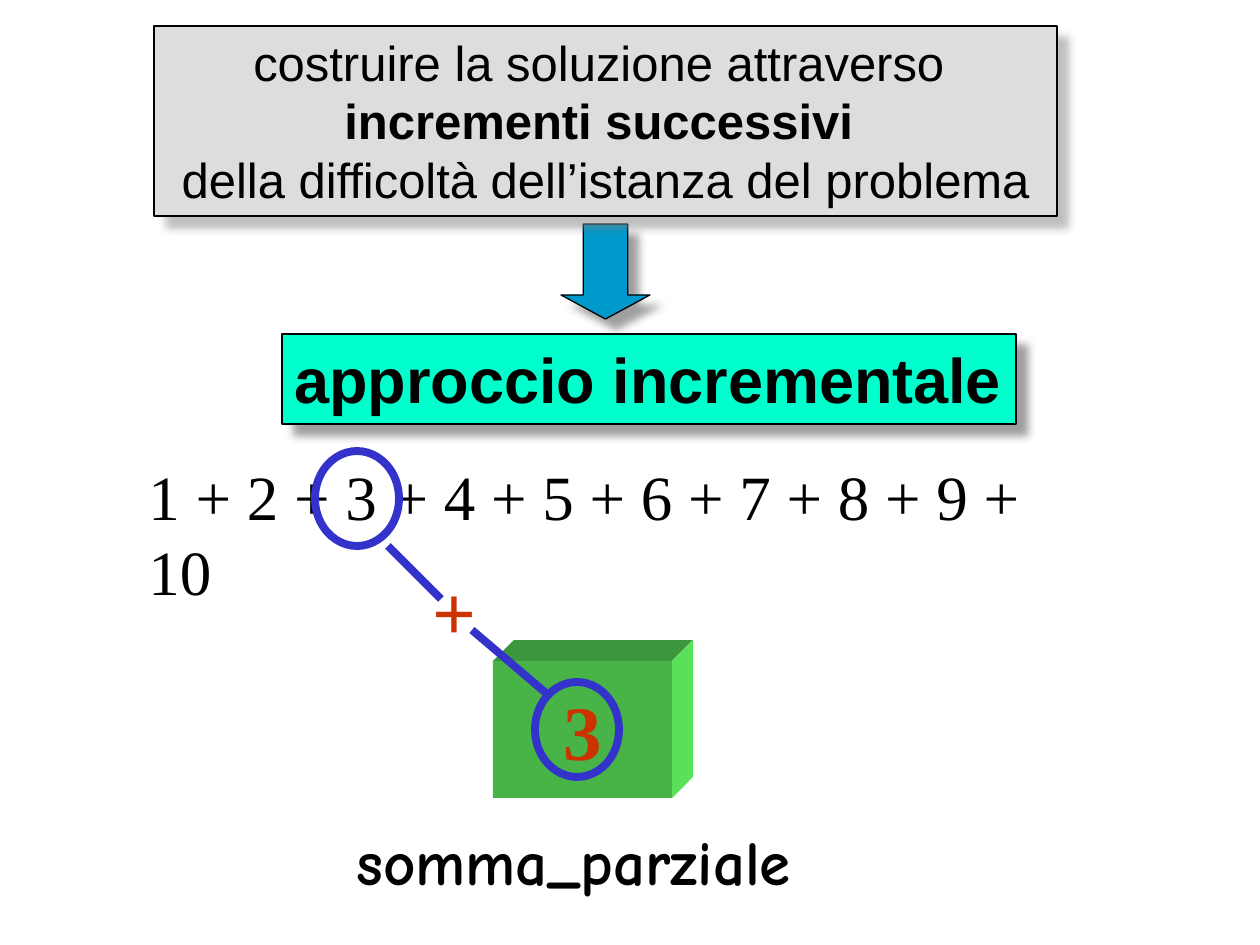
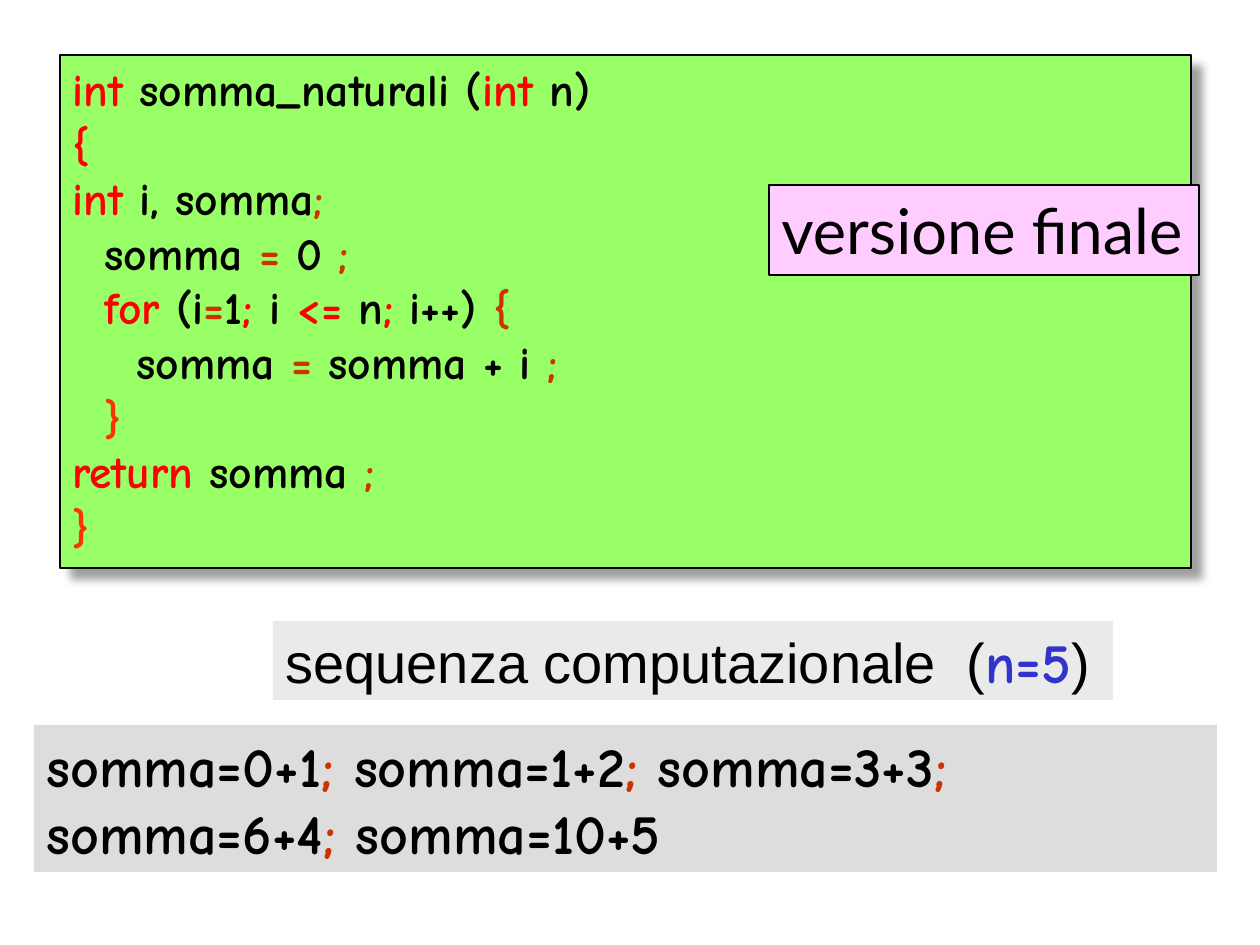
from lxml import etree
from pptx import Presentation
from pptx.dml.color import RGBColor
from pptx.enum.shapes import MSO_CONNECTOR, MSO_SHAPE
from pptx.enum.text import MSO_ANCHOR, PP_ALIGN
from pptx.oxml.ns import qn
from pptx.util import Pt

PX = 914400 / 126
RECTANGLE, OVAL, DOWN_ARROW = MSO_SHAPE.RECTANGLE, MSO_SHAPE.OVAL, MSO_SHAPE.DOWN_ARROW
STRAIGHT = MSO_CONNECTOR.STRAIGHT
TOP, MIDDLE = MSO_ANCHOR.TOP, MSO_ANCHOR.MIDDLE
LEFT, CENTER = PP_ALIGN.LEFT, PP_ALIGN.CENTER

SANS, SERIF, CODE, LATO = "Arial", "Times New Roman", "Comic Neue", "Lato"
CODE_INDENT = 32

BLACK = RGBColor(0x00, 0x00, 0x00)
RED = RGBColor(0xFF, 0x00, 0x00)
ORANGE = RGBColor(0xFF, 0x33, 0x00)
BRICK = RGBColor(0xCC, 0x33, 0x00)
BLUE = RGBColor(0x33, 0x33, 0xCC)
GREY = RGBColor(0xDD, 0xDD, 0xDD)
PALE_GREY = RGBColor(0xEA, 0xEA, 0xEA)
AQUA = RGBColor(0x00, 0xFF, 0xCC)
TEAL = RGBColor(0x00, 0x99, 0xCC)
LIME = RGBColor(0x99, 0xFF, 0x66)
PINK = RGBColor(0xFF, 0xCC, 0xFF)
CUBE_FRONT = RGBColor(0x48, 0xB4, 0x48)
CUBE_TOP = RGBColor(0x3C, 0x96, 0x3C)
CUBE_SIDE = RGBColor(0x5A, 0xE1, 0x5A)


def add_box(slide, bounds, fill=None, line=None, line_width=0.75, shadow=0, kind=RECTANGLE):
    shape = slide.shapes.add_shape(kind, *[round(value * PX) for value in bounds])
    shape.shadow.inherit = False
    if fill is None:
        shape.fill.background()
    else:
        shape.fill.solid()
        shape.fill.fore_color.rgb = fill
    if line is None:
        shape.line.fill.background()
    else:
        shape.line.color.rgb = line
        shape.line.width = Pt(line_width)
    if shadow:
        effects = shape._element.spPr.find(qn("a:effectLst"))
        outer = etree.SubElement(effects, qn("a:outerShdw"), blurRad=str(Pt(5)),
                                 dist=str(Pt(8.5)), dir="2700000", algn="tl", rotWithShape="0")
        colour = etree.SubElement(outer, qn("a:srgbClr"), val="808080")
        etree.SubElement(colour, qn("a:alpha"), val=str(shadow * 1000))
    return shape


def write(shape, paragraphs, size, font, bold=False, align=LEFT, anchor=TOP, wrap=True):
    frame = shape.text_frame
    frame.word_wrap = wrap
    frame.vertical_anchor = anchor
    for index, runs in enumerate(paragraphs):
        paragraph = frame.add_paragraph() if index else frame.paragraphs[0]
        paragraph.alignment = align
        for text, colour in runs:
            run = paragraph.add_run()
            run.text = text
            run.font.name = font
            run.font.size = Pt(size)
            run.font.bold = bold
            run.font.color.rgb = colour
    return frame.paragraphs


presentation = Presentation()
presentation.slide_width = round(1260 * PX)
presentation.slide_height = round(945 * PX)
blank_layout = presentation.slide_layouts[6]

slide = presentation.slides.add_slide(blank_layout)

series = slide.shapes.add_textbox(*[round(value * PX) for value in (136, 451, 974, 88)])
write(series, [[("1 + 2 + 3 + 4 + 5 + 6 + 7 + 8 + 9 + 10", BLACK)]], 36, SERIF)

cube_left, cube_top, cube_right, cube_bottom, depth = 493, 661, 672, 798, 21
top_face = [(cube_left, cube_top), (cube_left + depth, cube_top - depth),
            (cube_right + depth, cube_top - depth), (cube_right, cube_top)]
side_face = [(cube_right, cube_top), (cube_right + depth, cube_top - depth),
             (cube_right + depth, cube_bottom - depth), (cube_right, cube_bottom)]
for corners, colour in ((top_face, CUBE_TOP), (side_face, CUBE_SIDE)):
    builder = slide.shapes.build_freeform(*corners[0], scale=PX)
    builder.add_line_segments(corners[1:], close=True)
    face = builder.convert_to_shape()
    face.shadow.inherit = False
    face.fill.solid()
    face.fill.fore_color.rgb = colour
    face.line.fill.background()
front_face = add_box(slide, (cube_left, cube_top, cube_right - cube_left, cube_bottom - cube_top),
                     CUBE_FRONT)
write(front_face, [[("3", BRICK)]], 44, SERIF, True, CENTER, MIDDLE)

variable_name = slide.shapes.add_textbox(*[round(value * PX) for value in (344, 816, 500, 88)])
write(variable_name, [[("somma_parziale", BLACK)]], 36, CODE, True)

for left, top in ((315, 451), (535, 682)):
    add_box(slide, (left, top, 84, 95), line=BLUE, line_width=4.5, kind=OVAL)

for ends in ((388, 546, 441, 599), (472, 630, 546, 693)):
    connector = slide.shapes.add_connector(STRAIGHT, *[round(value * PX) for value in ends])
    connector.line.color.rgb = BLUE
    connector.line.width = Pt(4.5)
    etree.SubElement(connector._element.spPr, qn("a:effectLst"))

plus_sign = slide.shapes.add_textbox(*[round(value * PX) for value in (420, 557, 69, 105)])
write(plus_sign, [[("+", BRICK)]], 44, SERIF, True)

approach = add_box(slide, (282, 334, 734, 90), AQUA, BLACK, shadow=75)
write(approach, [[("approccio incrementale", BLACK)]], 36, SANS, True, wrap=False)

arrow = add_box(slide, (561, 224, 89, 95), TEAL, BLACK, shadow=75, kind=DOWN_ARROW)
arrow.adjustments[0] = 0.5
arrow.adjustments[1] = 0.27

strategy = add_box(slide, (154, 26, 903, 190), GREY, BLACK, shadow=50)
strategy_lines = write(strategy, [
    [("costruire la soluzione attraverso ", BLACK)],
    [("incrementi successivi", BLACK), (" ", BLACK)],
    [("della difficoltà dell’istanza del problema", BLACK)],
], 28, SANS, align=CENTER)
strategy_lines[1].runs[0].font.bold = True

slide = presentation.slides.add_slide(blank_layout)

code_lines = [
    (0, [("int ", RED), ("somma_naturali (", BLACK), ("int ", RED), ("n)", BLACK)]),
    (0, [("{", RED)]),
    (0, [("int ", RED), ("i, somma", BLACK), (";", BRICK)]),
    (1, [("somma ", BLACK), ("= ", BRICK), ("0", BLACK), (" ;", BRICK)]),
    (1, [("for ", RED), ("(i", BLACK), ("=", BRICK), ("1", BLACK), (";", RED), (" i ", BLACK),
         ("<=", RED), (" n", BLACK), (";", RED), (" i++) ", BLACK), ("{", BRICK)]),
    (2, [("somma ", BLACK), ("= ", BRICK), ("somma + i", BLACK), (" ;", BRICK)]),
    (1, [("}", ORANGE)]),
    (0, [("return ", RED), ("somma", BLACK), (" ;", BRICK)]),
    (0, [("}", ORANGE)]),
]
code_box = add_box(slide, (60, 55, 1131, 513), LIME, BLACK, shadow=75)
code_paragraphs = write(code_box, [runs for level, runs in code_lines], 26, CODE, True)
for paragraph, (level, runs) in zip(code_paragraphs, code_lines):
    paragraph._p.get_or_add_pPr().set("marL", str(round(level * CODE_INDENT * PX)))

steps_box = add_box(slide, (34, 725, 1183, 147), GREY)
write(steps_box, [
    [("somma=0+1", BLACK), ("; ", BRICK), ("somma=1+2", BLACK), ("; ", BRICK),
     ("somma=3+3", BLACK), (";", BRICK)],
    [("somma=6+4", BLACK), ("; ", BRICK), ("somma=10+5", BLACK)],
], 32, CODE, True)

sequence = add_box(slide, (273, 621, 840, 79), PALE_GREY)
sequence_runs = write(sequence, [[
    ("sequenza computazionale", BLACK), (" ", BLACK), ("(", BLACK), ("n=5", BLUE), (")", BLACK),
]], 32, SANS)[0].runs
sequence_runs[1]._r.get_or_add_rPr().set("spc", "800")
sequence_runs[3].font.name = CODE
sequence_runs[3].font.bold = True

version = add_box(slide, (769, 185, 430, 90), PINK, BLACK)
write(version, [[("versione finale", BLACK)]], 36, LATO, wrap=False)

presentation.save("out.pptx")
